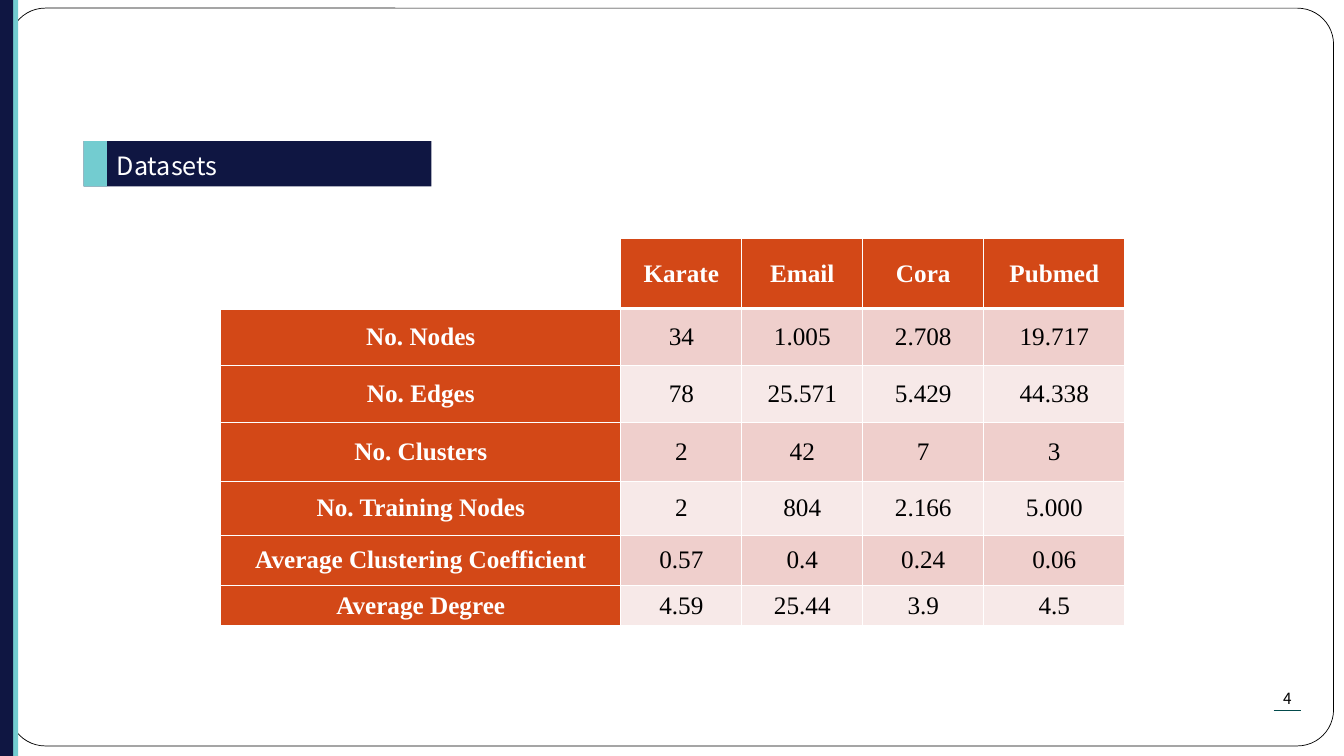
"""Builds the slide that lists the datasets and their statistics."""
from lxml import etree
from pptx import Presentation
from pptx import util as u
from pptx.dml.color import RGBColor
from pptx.enum import shapes, text
from pptx.oxml.ns import qn

WHITE = RGBColor(0xFF, 0xFF, 0xFF)
BLACK = RGBColor(0, 0, 0)
NAVY = RGBColor(0x0F, 0x16, 0x42)
TEAL = RGBColor(0x73, 0xCC, 0xD0)
DARK_TEAL = RGBColor(0x02, 0x4A, 0x4B)
ORANGE = RGBColor(0xD3, 0x48, 0x17)
BANDS = RGBColor(0xEF, 0xCF, 0xCC), RGBColor(0xF7, 0xE9, 0xE8)

SANS, SERIF = "Noto Sans CJK KR", "Times New Roman"

COLUMN_WIDTHS = [285.8, 86.4, 86.4, 86.4, 100.8]
ROW_HEIGHTS = [49.7, 41, 40.3, 42.5, 38.2, 36, 28.8]
DATASETS = [
    ["", "Karate", "Email", "Cora", "Pubmed"],
    ["No. Nodes", "34", "1.005", "2.708", "19.717"],
    ["No. Edges", "78", "25.571", "5.429", "44.338"],
    ["No. Clusters", "2", "42", "7", "3"],
    ["No. Training Nodes", "2", "804", "2.166", "5.000"],
    ["Average Clustering Coefficient", "0.57", "0.4", "0.24", "0.06"],
    ["Average Degree", "4.59", "25.44", "3.9", "4.5"],
]


def points(*lengths):
    return [u.Pt(length) for length in lengths]


def add_block(parent, box, color, kind=shapes.MSO_SHAPE.RECTANGLE):
    block = parent.shapes.add_shape(kind, *points(*box))
    block.shadow.inherit = False
    block.fill.solid()
    block.fill.fore_color.rgb = color
    block.line.fill.background()
    return block


def style_paragraph(paragraph, content, font_name, size, color, centred=True, bold=False):
    paragraph.text = content
    paragraph.alignment = text.PP_ALIGN.CENTER if centred else text.PP_ALIGN.LEFT
    font = paragraph.font
    font.name, font.size, font.bold = font_name, u.Pt(size), bold
    font.color.rgb = color


def add_label(parent, box, content, size, color, centred):
    label = parent.shapes.add_textbox(*points(*box))
    label.text_frame.word_wrap = True
    label.text_frame.auto_size = text.MSO_AUTO_SIZE.SHAPE_TO_FIT_TEXT
    style_paragraph(label.text_frame.paragraphs[0], content, SANS, size, color, centred)


def add_frame(slide, width, height):
    frame = add_block(slide, (6.5, 5.8, width - 13.9, height - 13),
                      WHITE, shapes.MSO_SHAPE.ROUNDED_RECTANGLE)
    frame.adjustments[0] = 0.049
    frame.line.color.rgb = BLACK
    frame.line.width = u.Pt(0.5)
    add_block(slide, (3.6, 0, 9.4, height), TEAL)
    add_block(slide, (0, 0, 9.4, height), NAVY)


def add_page_number(slide, box, number):
    left, top, width, height = box
    add_label(slide, box, number, 11, BLACK, True)
    middle, base = left + width / 2, top + 18.7
    rule = slide.shapes.add_connector(
        shapes.MSO_CONNECTOR.STRAIGHT, *points(middle - 9.8, base, middle + 9.8, base))
    rule.line.color.rgb = DARK_TEAL
    rule.line.width = u.Pt(0.5)
    etree.SubElement(rule._element.spPr, qn("a:effectLst"))


def add_heading(slide, box, content):
    left, top, width, height = box
    accent = 16.6
    group = slide.shapes.add_group_shape()
    add_block(group, box, NAVY)
    add_block(group, (left, top, accent, height), TEAL)
    add_label(group, (left + accent, top + 2.9, 194.4, 28.8), content, 18, WHITE, False)


def set_borders(cell, bottom_width):
    properties = cell._tc.get_or_add_tcPr()
    widths = {"lnL": 1, "lnR": 1, "lnT": 1, "lnB": bottom_width}
    for position, (side, width) in enumerate(widths.items()):
        border = etree.Element(qn(f"a:{side}"), w=str(u.Pt(width)))
        fill = etree.SubElement(border, qn("a:solidFill"))
        etree.SubElement(fill, qn("a:srgbClr"), val=str(WHITE))
        properties.insert(position, border)


def fill_cell(cell, row, column, content):
    heading = row == 0 or column == 0
    cell.fill.solid()
    if not content:
        cell.fill.fore_color.rgb = WHITE
    else:
        cell.fill.fore_color.rgb = ORANGE if heading else BANDS[(row - 1) % 2]
        style_paragraph(cell.text_frame.paragraphs[0], content, SERIF, 18,
                        WHITE if heading else BLACK, bold=heading)
    cell.vertical_anchor = text.MSO_ANCHOR.MIDDLE
    cell.margin_left = cell.margin_right = u.Pt(5)
    cell.margin_top = cell.margin_bottom = 0
    set_borders(cell, 3 if row == 0 else 1)


def add_dataset_table(slide, left, top):
    table = slide.shapes.add_table(
        len(DATASETS), len(COLUMN_WIDTHS),
        *points(left, top, sum(COLUMN_WIDTHS), sum(ROW_HEIGHTS))).table
    table.first_col = True
    for column, width in zip(table.columns, COLUMN_WIDTHS):
        column.width = u.Pt(width)
    for row, height in zip(table.rows, ROW_HEIGHTS):
        row.height = u.Pt(height)
    for row, values in enumerate(DATASETS):
        for column, content in enumerate(values):
            fill_cell(table.cell(row, column), row, column, content)


def main():
    presentation = Presentation()
    width, height = 960, 540
    presentation.slide_width, presentation.slide_height = points(width, height)
    slide = presentation.slides.add_slide(presentation.slide_layouts[6])
    add_frame(slide, width, height)
    add_page_number(slide, (895, 488.9, 49, 20.9), "4")
    add_heading(slide, (59.8, 100.8, 248.4, 32.4), "Datasets")
    add_dataset_table(slide, 157.7, 170.6)
    presentation.save("out.pptx")


if __name__ == "__main__":
    main()
